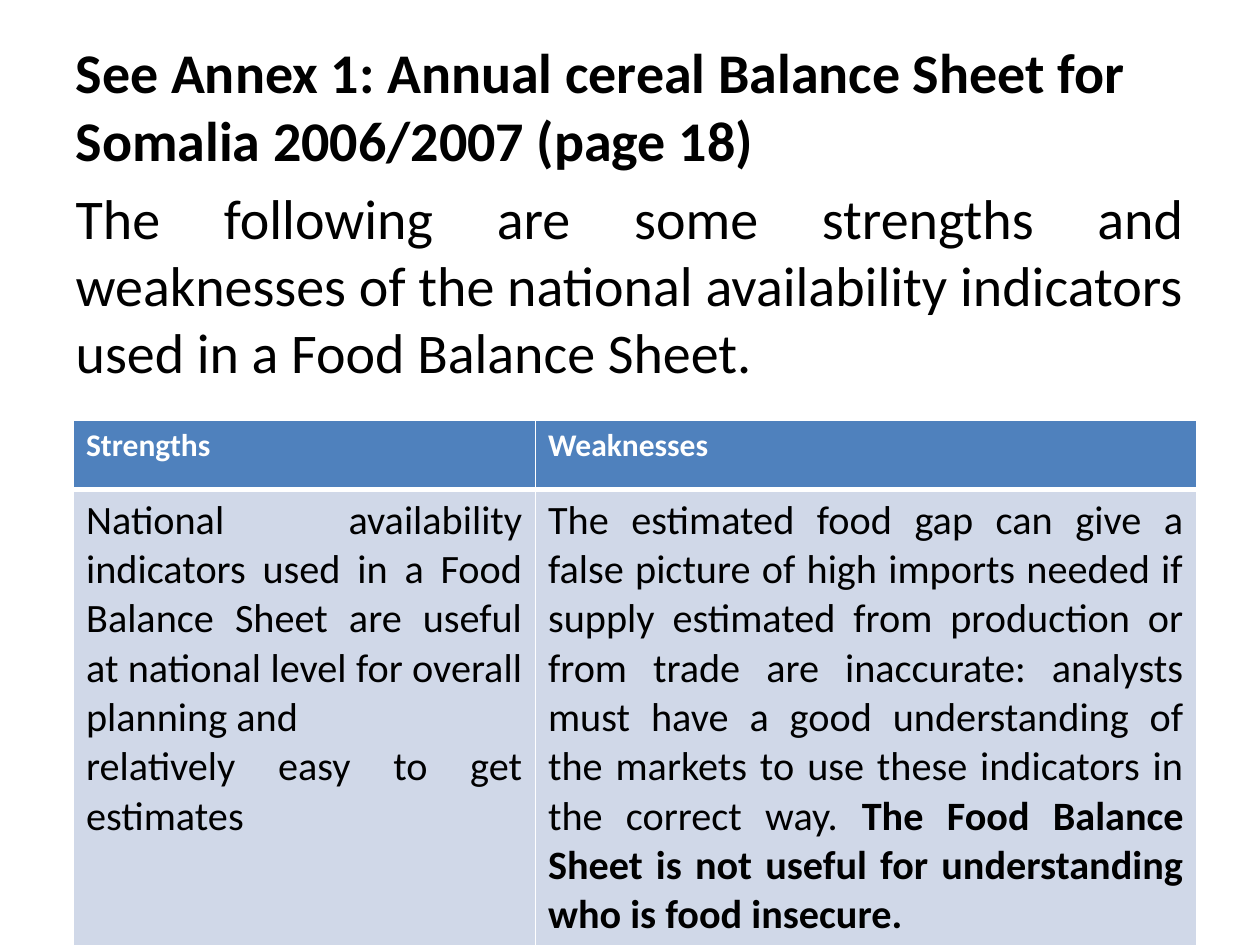
from pptx import Presentation
from pptx import util as u
from pptx.dml.color import RGBColor
from pptx.enum import text
from pptx.oxml.ns import qn
from lxml import etree

INTRO = [
    ("See Annex 1: Annual cereal Balance Sheet for Somalia 2006/2007 (page 18)", True, text.PP_ALIGN.LEFT),
    ("The following are some strengths and weaknesses of the national availability "
     "indicators used in a Food Balance Sheet.", False, text.PP_ALIGN.JUSTIFY),
]
HEADERS = ["Strengths", "Weaknesses"]
DETAILS = [
    [
        [("National availability indicators used in a Food Balance Sheet are useful "
          "at national level for overall planning and", False)],
        [("relatively easy to get estimates", False)],
    ],
    [
        [("The estimated food gap can give a false picture of high imports needed if supply "
          "estimated from production or from trade are inaccurate: analysts must have a good "
          "understanding of the markets to use these indicators in the correct way. ", False),
         ("The Food Balance Sheet is not useful for understanding who is food insecure.", True)],
    ],
]
THEME = {
    "font": "Calibri", "intro_size": 32, "header_size": 18, "detail_size": 23,
    "text": "000000", "header_text": "FFFFFF", "header_fill": "4F81BD",
    "detail_fill": "D0D8E8", "border": "FFFFFF",
}
BODY_BOX = (36, 18, 648, 522)
TABLE_ORIGIN = (42, 240)
COLUMN_WIDTHS = [264, 378]
ROW_HEIGHTS = [39.6, 242.6]


def format_run(run, size, color, bold):
    run.font.name = THEME["font"]
    run.font.size = u.Pt(size)
    run.font.bold = bold
    run.font.color.rgb = RGBColor.from_string(color)


def remove_bullet(paragraph):
    properties = paragraph._p.get_or_add_pPr()
    properties.set("marL", "0")
    properties.set("indent", "0")
    etree.SubElement(properties, qn("a:buNone"))


def style_cell(cell, fill, bottom_width):
    properties = cell._tc.get_or_add_tcPr()
    for side, width in (("L", 1), ("R", 1), ("T", 1), ("B", bottom_width)):
        line = etree.SubElement(properties, qn(f"a:ln{side}"), w=str(u.Pt(width)))
        line_fill = etree.SubElement(line, qn("a:solidFill"))
        etree.SubElement(line_fill, qn("a:srgbClr"), val=THEME["border"])
    cell.fill.solid()
    cell.fill.fore_color.rgb = RGBColor.from_string(fill)


def fill_body(body):
    body.left, body.top, body.width, body.height = map(u.Pt, BODY_BOX)
    frame = body.text_frame
    frame.text = "\n".join(content for content, _, _ in INTRO)
    frame.auto_size = text.MSO_AUTO_SIZE.NONE
    for paragraph, (_, bold, alignment) in zip(frame.paragraphs, INTRO):
        paragraph.alignment = alignment
        remove_bullet(paragraph)
        format_run(paragraph.runs[0], THEME["intro_size"], THEME["text"], bold)


def add_comparison_table(slide):
    size = (sum(COLUMN_WIDTHS), sum(ROW_HEIGHTS))
    table = slide.shapes.add_table(2, len(HEADERS), *map(u.Pt, TABLE_ORIGIN + size)).table
    for column, width in zip(table.columns, COLUMN_WIDTHS):
        column.width = u.Pt(width)
    for row, height in zip(table.rows, ROW_HEIGHTS):
        row.height = u.Pt(height)
    for index, (header, paragraphs) in enumerate(zip(HEADERS, DETAILS)):
        header_cell, detail_cell = table.cell(0, index), table.cell(1, index)
        header_cell.text_frame.text = header
        format_run(header_cell.text_frame.paragraphs[0].runs[0],
                   THEME["header_size"], THEME["header_text"], True)
        style_cell(header_cell, THEME["header_fill"], 3)
        frame = detail_cell.text_frame
        for number, runs in enumerate(paragraphs):
            paragraph = frame.add_paragraph() if number else frame.paragraphs[0]
            paragraph.alignment = text.PP_ALIGN.JUSTIFY
            for content, bold in runs:
                run = paragraph.add_run()
                run.text = content
                format_run(run, THEME["detail_size"], THEME["text"], bold)
        style_cell(detail_cell, THEME["detail_fill"], 1)
        detail_top = detail_cell._tc.tcPr.find(qn("a:lnT"))
        detail_top.set("w", str(u.Pt(3)))


def main():
    presentation = Presentation()
    presentation.slide_width, presentation.slide_height = u.Pt(720), u.Pt(540)
    slide = presentation.slides.add_slide(presentation.slide_layouts[1])
    title = slide.shapes.title
    title.element.getparent().remove(title.element)
    fill_body(slide.placeholders[1])
    add_comparison_table(slide)
    presentation.save("out.pptx")


if __name__ == "__main__":
    main()
